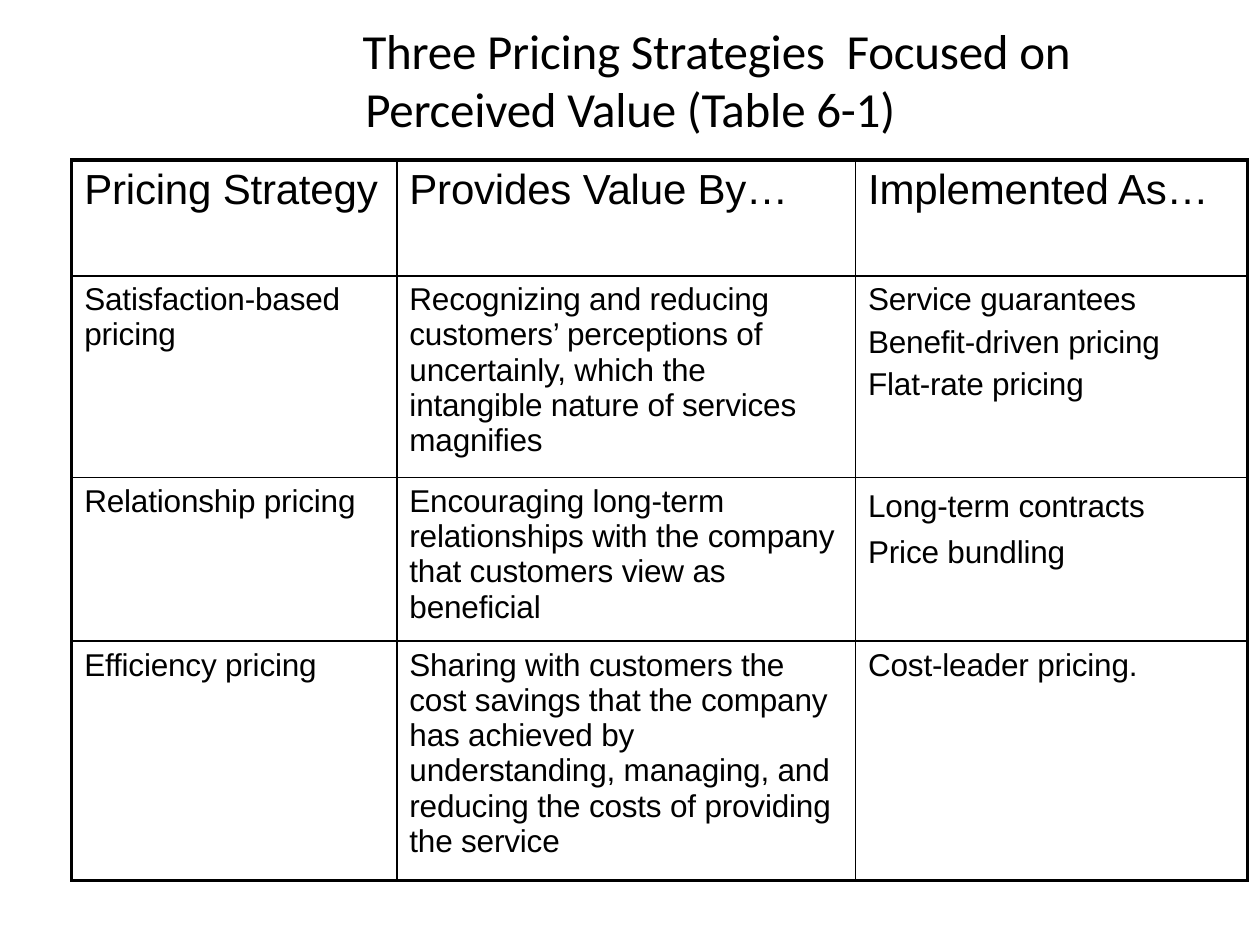
from lxml import etree
from pptx import Presentation
from pptx.dml.color import RGBColor
from pptx.enum import text as tx
from pptx.oxml import ns
from pptx.util import Pt

HUES = {"ink": "000000"}
COLS = [185.8, 262.1, 223.9]
ROWS = [66.2, 115.2, 93.6, 136.8]
THIN, THICK = 1, 2.25
STEP = 3.7  # usual space above a cell's text

HEADS = ["Pricing Strategy", "Provides Value By…", "Implemented As…"]
# Each cell is a list of paragraphs: (runs, space above, line spacing, right indent)
BODY = [
    [[(["Satisfaction-based  pricing"], STEP, None, 0)],
     [(["Recognizing and reducing  customers’ perceptions of  uncertainly, "
        "which the  intangible nature of services  magnifies"], STEP, None, 7)],
     [(["Service guarantees"], STEP, None, 0),
      (["Benefit-driven pricing  Flat-rate pricing"], 0.1, 1.2, 36)]],
    [[(["Relationship pricing"], STEP, None, 0)],
     [(["Encouraging long-term  relationships with the company  that "
        "customers view as  beneficial"], STEP, None, 0)],
     [(["Long-term contracts  ", "Price ", "bundling"], 0.7, Pt(26.1), 36)]],
    [[(["Efficiency pricing"], STEP, None, 0)],
     [(["Sharing with customers the  cost savings that the company  has "
        "achieved by  understanding, managing, and  reducing the costs of "
        "providing  the service"], STEP, None, 7)],
     [(["Cost-leader pricing."], STEP, None, 0)]],
]


def add_run(para, words, size, face):
    run = para.add_run()
    run.text = words
    run.font.size = Pt(size)
    run.font.name = face
    run.font.color.rgb = RGBColor.from_string(HUES["ink"])
    run.font._element.set("spc", "-10")


def indent(para, left=0, right=0, first=0):
    props = para._p.get_or_add_pPr()
    for key, val in (("marL", left), ("marR", right), ("indent", first)):
        props.set(key, str(Pt(val)))


def add_edge(cell, side, width):
    line = etree.SubElement(cell._tc.get_or_add_tcPr(), ns.qn("a:ln" + side),
                            w=str(Pt(width)))
    fill = etree.SubElement(line, ns.qn("a:solidFill"))
    etree.SubElement(fill, ns.qn("a:srgbClr"), val=HUES["ink"])


def put_title(slide, x, y, w, h):
    title = slide.shapes.title
    title.left, title.top, title.width, title.height = map(Pt, (x, y, w, h))
    frame = title.text_frame
    frame.auto_size = tx.MSO_AUTO_SIZE.NONE
    frame.word_wrap = True
    frame.vertical_anchor = tx.MSO_ANCHOR.MIDDLE
    frame.margin_left = frame.margin_right = frame.margin_bottom = 0
    frame.margin_top = Pt(1)
    para = frame.paragraphs[0]
    para.alignment = tx.PP_ALIGN.CENTER
    para.space_before = Pt(1)
    indent(para, left=1, first=98.6)
    add_run(para, "Three Pricing Strategies  Focused on "
                  "Perceived Value (Table 6-1)", 28, "Calibri")


def fill_cell(cell, paras, size):
    cell.margin_left = cell.margin_right = cell.margin_bottom = 0
    cell.margin_top = Pt(0.7 if paras[0][1] < STEP else 3.6)
    frame = cell.text_frame
    for i, (runs, above, pitch, right) in enumerate(paras):
        para = frame.add_paragraph() if i else frame.paragraphs[0]
        para.space_before = Pt(above)
        if pitch:
            para.line_spacing = pitch
        indent(para, left=7.2, right=right)
        for words in runs:
            add_run(para, words, size, "Arial")


def put_table(slide, x, y):
    rows = [[[([head], STEP, None, 0)] for head in HEADS]] + BODY
    frame = slide.shapes.add_table(len(ROWS), len(COLS), Pt(x), Pt(y),
                                   Pt(sum(COLS)), Pt(sum(ROWS)))
    table = frame.table
    table.first_row = table.horz_banding = False
    for col, width in zip(table.columns, COLS):
        col.width = Pt(width)
    for r, (row, high) in enumerate(zip(rows, ROWS)):
        table.rows[r].height = Pt(high)
        for c, paras in enumerate(row):
            cell = table.cell(r, c)
            fill_cell(cell, paras, 18 if r else 24)
            # Thick lines round the outside, thin ones within
            outer = {"L": c == 0, "R": c == len(COLS) - 1,
                     "T": r == 0, "B": r == len(ROWS) - 1}
            for side, edge in outer.items():
                add_edge(cell, side, THICK if edge else THIN)
            cell.fill.background()


def main():
    deck = Presentation()
    deck.slide_width, deck.slide_height = Pt(720), Pt(540)
    slide = deck.slides.add_slide(deck.slide_layouts[5])
    put_title(slide, 95, 10, 529.2, 69.1)
    put_table(slide, 41, 91.4)
    deck.save("out.pptx")


if __name__ == "__main__":
    main()
